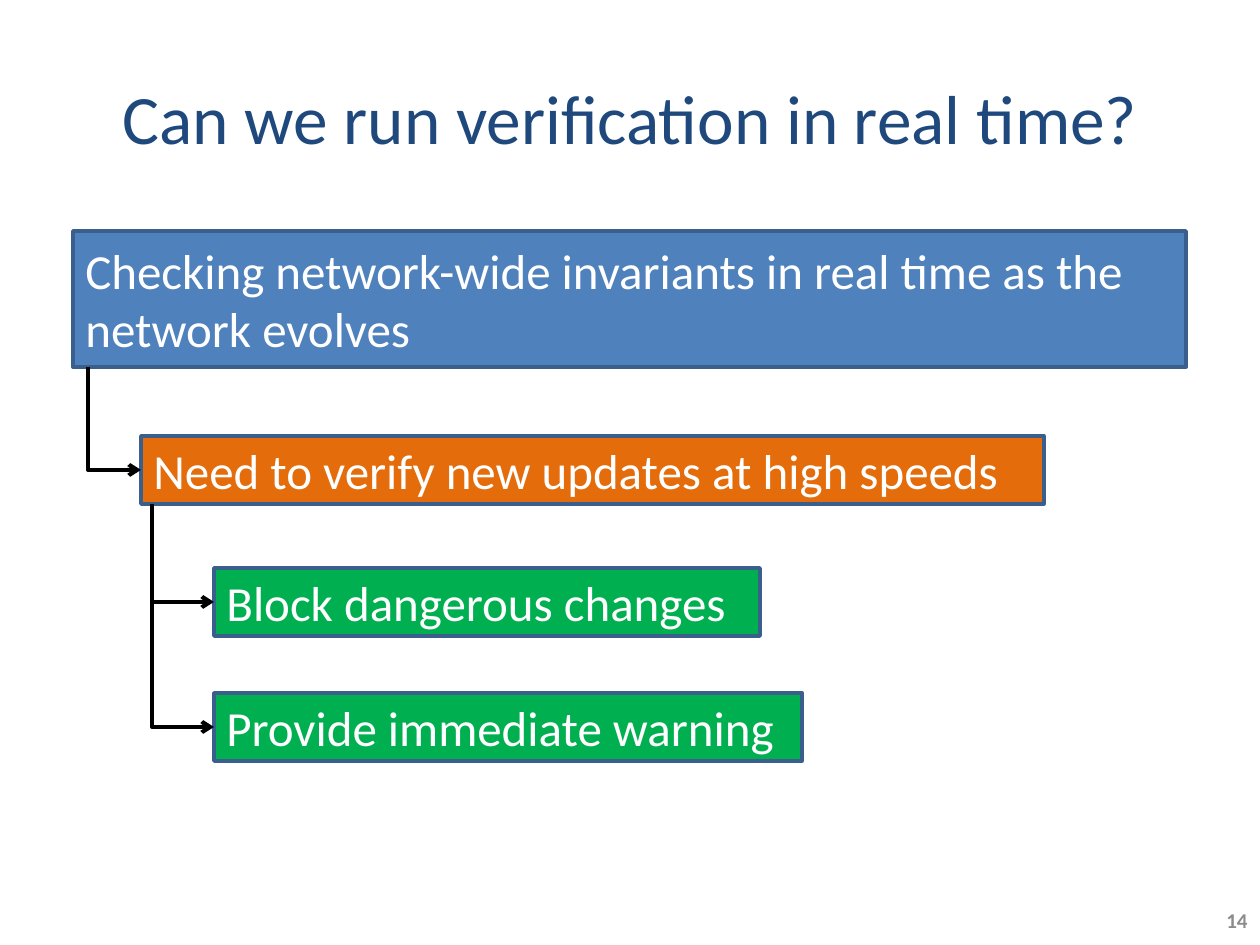
from pptx import Presentation
from pptx.dml.color import RGBColor
from pptx.enum.shapes import MSO_CONNECTOR, MSO_SHAPE
from pptx.enum.text import MSO_ANCHOR, MSO_AUTO_SIZE, PP_ALIGN
from pptx.oxml.ns import qn
from pptx.util import Emu, Pt
from lxml.etree import SubElement

NAVY = RGBColor(0x1F, 0x49, 0x7D)
BLUE = RGBColor(0x4F, 0x81, 0xBD)
EDGE = RGBColor(0x3A, 0x5F, 0x8C)
ORANGE = RGBColor(0xE4, 0x6C, 0x0A)
GREEN = RGBColor(0x00, 0xB0, 0x50)
GRAY = RGBColor(0x8C, 0x8C, 0x8C)
WHITE = RGBColor(0xFF, 0xFF, 0xFF)
BLACK = RGBColor(0, 0, 0)


def px(count):
    return Emu(round(count * 914400 / 126))


class Deck:
    face = "Calibri"

    def __init__(self, slide):
        self.slide = slide

    def label(self, shape, text, size, color, align, bold=False):
        frame = shape.text_frame
        frame.word_wrap = True
        frame.auto_size = MSO_AUTO_SIZE.NONE
        frame.vertical_anchor = MSO_ANCHOR.MIDDLE
        frame.text = text
        para = frame.paragraphs[0]
        para.alignment = align
        font = para.font
        font.name, font.size, font.bold = self.face, Pt(size), bold
        font.color.rgb = color

    def title(self, text, x, y, w, h):
        shape = self.slide.shapes.title
        shape.left, shape.top, shape.width, shape.height = map(px, (x, y, w, h))
        self.label(shape, text, 39.6, NAVY, PP_ALIGN.CENTER)

    def number(self, text, x, y, w, h):
        shape = self.slide.shapes.add_textbox(*map(px, (x, y, w, h)))
        self.label(shape, text, 12, GRAY, PP_ALIGN.RIGHT, True)

    def box(self, text, fill, x, y, w, h=68):
        shape = self.slide.shapes.add_shape(MSO_SHAPE.RECTANGLE, *map(px, (x, y, w, h)))
        shape.shadow.inherit = False
        shape.fill.solid()
        shape.fill.fore_color.rgb = fill
        shape.line.color.rgb = EDGE
        shape.line.width = Pt(2)
        self.label(shape, text, 28, WHITE, PP_ALIGN.LEFT)
        return shape

    def link(self, owner, child, inset):
        x, y = owner.left + px(inset), owner.top + owner.height
        wide = child.left - x
        tall = child.top + child.height // 2 - y
        left = x + (wide - tall) // 2
        top = y + (tall - wide) // 2
        line = self.slide.shapes.add_connector(
            MSO_CONNECTOR.ELBOW, left + tall, top, left, top + wide)
        line.line.color.rgb = BLACK
        line.line.width = Pt(2.25)
        props = line._element.spPr
        props.find(qn("a:xfrm")).set("rot", "16200000")
        props.find(qn("a:prstGeom")).set("prst", "bentConnector2")
        SubElement(props.find(qn("a:ln")), qn("a:tailEnd"), type="arrow")
        SubElement(props, qn("a:effectLst"))


def main():
    show = Presentation()
    show.slide_width, show.slide_height = px(1260), px(945)
    deck = Deck(show.slides.add_slide(show.slide_layouts[5]))
    deck.title("Can we run verification in real time?", 63, 38, 1134, 158)
    deck.number("14", 1173, 895, 87, 50)
    goal = deck.box("Checking network-wide invariants in real time as the network evolves",
                    BLUE, 73, 231, 1113, 136)
    need = deck.box("Need to verify new updates at high speeds", ORANGE, 141, 436, 903)
    block = deck.box("Block dangerous changes", GREEN, 214, 568, 546)
    warn = deck.box("Provide immediate warning", GREEN, 214, 693, 588)
    deck.link(goal, need, 15)
    for child in (block, warn):
        deck.link(need, child, 11)
    show.save("out.pptx")


if __name__ == "__main__":
    main()
